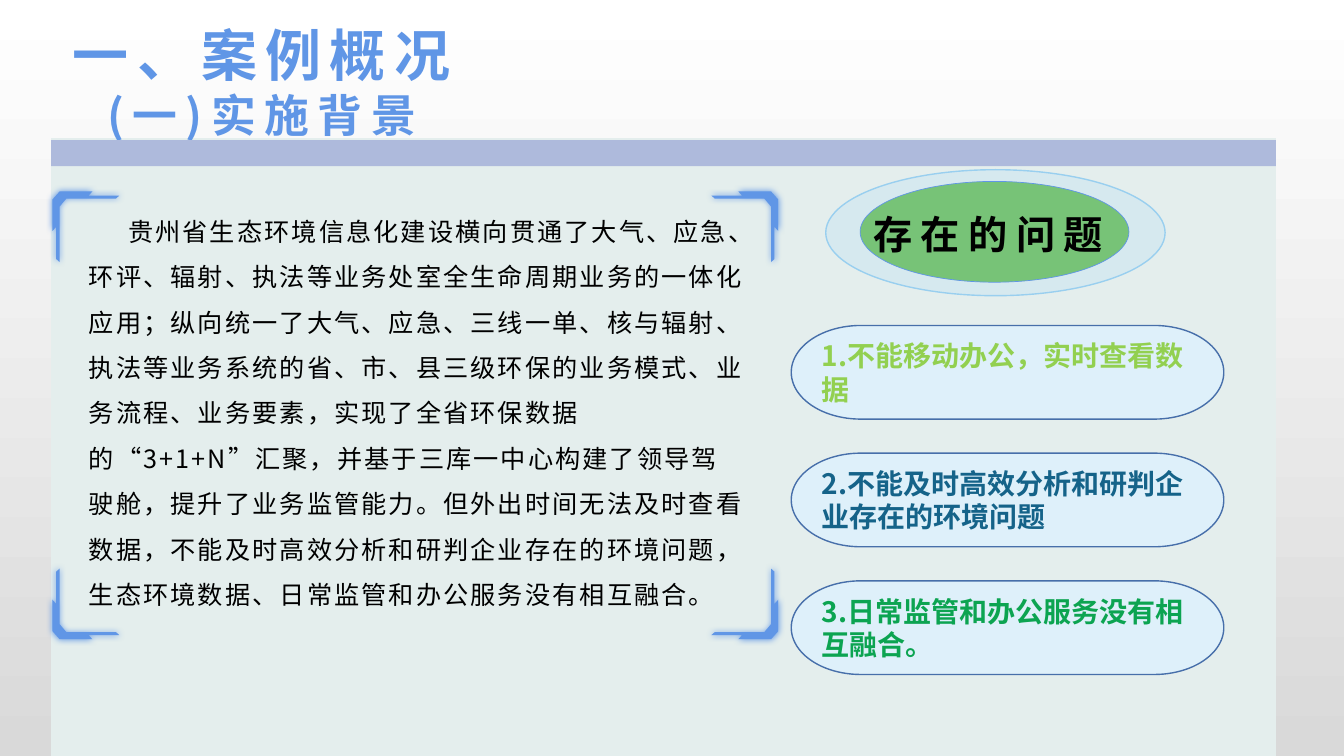
from lxml import etree
from pptx import Presentation
from pptx import util as u
from pptx.dml.color import RGBColor
from pptx.enum import shapes, text
from pptx.oxml import ns

BLUE = RGBColor(0x60, 0x96, 0xE6)
BLACK = RGBColor(0, 0, 0)
WHITE = RGBColor(0xFF, 0xFF, 0xFF)
GREY = RGBColor(0xD9, 0xD9, 0xD9)
PANEL = RGBColor(0xE4, 0xEE, 0xED)
BAND = RGBColor(0xAE, 0xBA, 0xDC)
HALO = RGBColor(0xBC, 0xE2, 0xF5)
HALO_EDGE = RGBColor(0x99, 0xCF, 0xEF)
GREEN = RGBColor(0x77, 0xC3, 0x77)
CARD = RGBColor(0xDE, 0xF0, 0xFA)
CARD_EDGE = RGBColor(0x47, 0x6F, 0xAA)
LIME = RGBColor(0x92, 0xD0, 0x50)
TEAL = RGBColor(0x15, 0x63, 0x89)
EMERALD = RGBColor(0x0C, 0xA4, 0x51)

COLUMNS, ROWS = 160, 90
SHAPE = shapes.MSO_SHAPE
BODY = (
    "贵州省生态环境信息化建设横向贯通了大气、应急、环评、辐射、执法等业务处室全生命周期业务的一体化应用；"
    "纵向统一了大气、应急、三线一单、核与辐射、执法等业务系统的省、市、县三级环保的业务模式、业务流程、业务要素，"
    "实现了全省环保数据的“3+1+N”汇聚，并基于三库一中心构建了领导驾驶舱，提升了业务监管能力。"
    "但外出时间无法及时查看数据，不能及时高效分析和研判企业存在的环境问题，"
    "生态环境数据、日常监管和办公服务没有相互融合。"
)
PROBLEMS = [
    ("1.不能移动办公，实时查看数据", LIME),
    ("2.不能及时高效分析和研判企业存在的环境问题", TEAL),
    ("3.日常监管和办公服务没有相互融合。", EMERALD),
]
BRACKET = [
    (6.25, 23.75), (6.25, 27.5), (6.7, 27), (6.7, 30.85), (7.1, 31.2), (7.1, 24.6),
    (7.9, 23.65), (13.8, 23.65), (14.2, 23.3), (10.55, 23.3), (11, 22.8), (7.1, 22.8),
]
MIRROR = 98.9


class Slide:
    font = "Noto Sans CJK SC"

    def __init__(self, deck):
        self.page = deck.slides.add_slide(deck.slide_layouts[6])
        self.column = deck.slide_width / COLUMNS
        self.row = deck.slide_height / ROWS

    def place(self, left, top, width, height):
        return (round(left * self.column), round(top * self.row),
                round(width * self.column), round(height * self.row))

    def background(self, start, end):
        fill = self.page.background.fill
        fill.gradient()
        fill.gradient_angle = 270
        for stop, color in zip(fill.gradient_stops, (start, end)):
            stop.color.rgb = color

    def paint(self, shape, fill, line=None, width=1):
        shape.shadow.inherit = False
        shape.fill.solid()
        shape.fill.fore_color.rgb = fill
        if line is None:
            shape.line.fill.background()
        else:
            shape.line.color.rgb = line
            shape.line.width = u.Pt(width)
        return shape

    def shape(self, kind, area, fill, line=None, width=1):
        shape = self.page.shapes.add_shape(kind, *self.place(*area))
        return self.paint(shape, fill, line, width)

    def fade(self, shape, percent):
        color = shape._element.spPr.find(ns.qn("a:solidFill")).find(ns.qn("a:srgbClr"))
        etree.SubElement(color, ns.qn("a:alpha"), val=str(percent * 1000))

    def bracket(self, points):
        first, *others = [(x * self.column, y * self.row) for x, y in points]
        builder = self.page.shapes.build_freeform(*first)
        builder.add_line_segments(others, close=True)
        shape = self.paint(builder.convert_to_shape(), BLUE)
        effects = shape._element.spPr.find(ns.qn("a:effectLst"))
        glow = etree.SubElement(effects, ns.qn("a:outerShdw"), blurRad=str(u.Pt(5)),
                                dist="0", dir="0", algn="ctr", rotWithShape="0")
        etree.SubElement(glow, ns.qn("a:srgbClr"), val=str(BLUE))

    def textbox(self, area):
        box = self.page.shapes.add_textbox(*self.place(*area))
        box.text_frame.word_wrap = True
        return box

    def label(self, box, lines, sizes, color, bold=True, spacing=0,
              align=text.PP_ALIGN.LEFT, anchor=text.MSO_ANCHOR.TOP):
        frame = box.text_frame
        frame.text = "\n".join(lines)
        frame.vertical_anchor = anchor
        for para, size in zip(frame.paragraphs, sizes):
            para.alignment = align
            for span in para.runs:
                span.font.name = self.font
                span.font.size = u.Pt(size)
                span.font.bold = bold
                span.font.color.rgb = color
                props = span._r.get_or_add_rPr()
                props.set("spc", str(round(spacing * 100)))
                etree.SubElement(props, ns.qn("a:ea"), typeface=self.font)
        return frame.paragraphs[0]


def main():
    deck = Presentation()
    deck.slide_width, deck.slide_height = u.Inches(13.33), u.Inches(7.5)
    slide = Slide(deck)
    middle = text.MSO_ANCHOR.MIDDLE

    slide.background(WHITE, GREY)
    slide.shape(SHAPE.RECTANGLE, (6.1, 16.45, 145.8, 73.55), PANEL)
    title = slide.textbox((5.4, 1.8, 51.5, 15.7))
    slide.label(title, ["一、案例概况", "(一)实施背景"], [40, 32], BLUE,
                spacing=6, align=text.PP_ALIGN.CENTER)

    for right in (False, True):
        for bottom in (False, True):
            slide.bracket([(MIRROR - x if right else x, MIRROR - y if bottom else y)
                           for x, y in BRACKET])

    body = slide.textbox((9.4, 25.4, 80.4, 45.7))
    para = slide.label(body, [BODY], [18], BLACK, bold=False, spacing=1.5, anchor=middle)
    para.line_spacing = 1.5
    para._p.get_or_add_pPr().set("indent", str(u.Inches(0.39)))

    halo = slide.shape(SHAPE.OVAL, (98.3, 20.2, 40.4, 15), HALO, HALO_EDGE)
    slide.fade(halo, 35)
    slide.shape(SHAPE.OVAL, (102.4, 21.6, 32, 12), GREEN, BLUE, 0.5)
    heading = slide.textbox((102.8, 24.5, 32.4, 6.8))
    slide.label(heading, ["存在的问题"], [28], BLACK, spacing=6)

    for index, (problem, color) in enumerate(PROBLEMS):
        card = slide.shape(SHAPE.FLOWCHART_TERMINATOR,
                           (94.2, 38.75 + 15.2 * index, 51.5, 11.15), CARD, CARD_EDGE)
        slide.label(card, [problem], [20], color, anchor=middle)

    slide.shape(SHAPE.RECTANGLE, (6.1, 16.7, 145.8, 3.1), BAND)
    deck.save("out.pptx")


if __name__ == "__main__":
    main()
